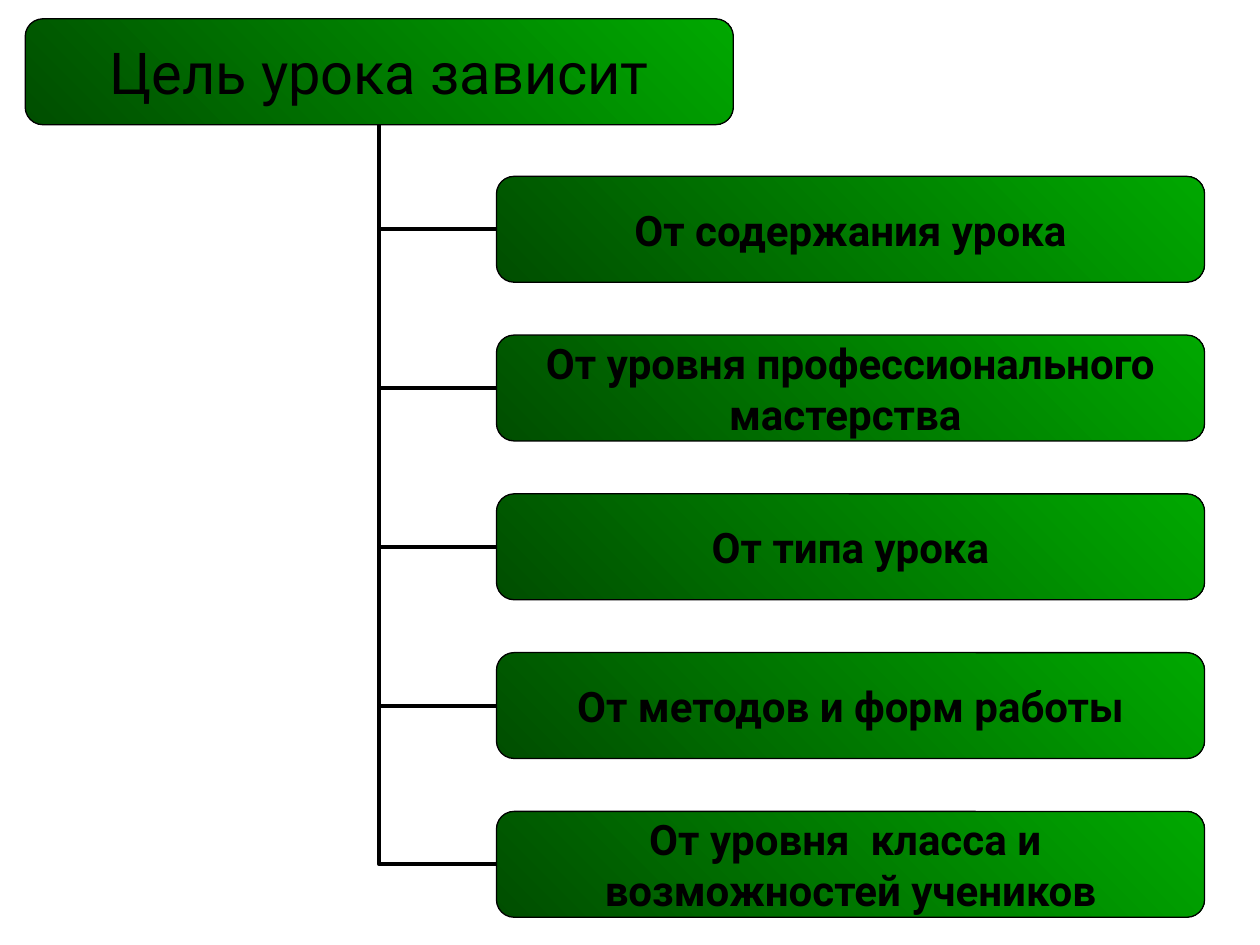
from dataclasses import dataclass

from lxml import etree
from pptx import Presentation
from pptx.dml.color import RGBColor
from pptx.enum.shapes import MSO_CONNECTOR as Connector, MSO_SHAPE as Shape
from pptx.enum.text import MSO_ANCHOR as Anchor, PP_ALIGN as Align
from pptx.oxml.ns import qn
from pptx.util import Inches, Pt


@dataclass(frozen=True)
class Theme:
    ink: RGBColor = RGBColor(0x00, 0x00, 0x00)
    dark_green: RGBColor = RGBColor(0x00, 0x4E, 0x00)
    green: RGBColor = RGBColor(0x00, 0xA8, 0x00)
    font: str = "Roboto"
    title_size: Pt = Pt(33)
    factor_size: Pt = Pt(24)
    border: Pt = Pt(0.75)
    branch: Pt = Pt(2.25)


theme = Theme()

# Layout: the goal on top, its factors indented below at an equal pitch
BOX_WIDTH, BOX_HEIGHT = 5.62, 0.84
GOAL_LEFT, GOAL_TOP = 0.2, 0.15
FACTOR_LEFT, FACTOR_TOP, FACTOR_PITCH = 3.94, 1.4, 1.26

goal = "Цель урока зависит"
factors = [
    "От содержания урока",
    "От уровня профессионального\nмастерства ",
    "От типа урока",
    "От методов и форм работы",
    "От уровня  класса и \nвозможностей учеников",
]

deck = Presentation()
deck.slide_width, deck.slide_height = Inches(10), Inches(7.5)
page = deck.slides.add_slide(deck.slide_layouts[6])


def add_box(left, top, text, size, bold):
    box = page.shapes.add_shape(Shape.ROUNDED_RECTANGLE, Inches(left), Inches(top),
                                Inches(BOX_WIDTH), Inches(BOX_HEIGHT))
    box.shadow.inherit = False
    box.fill.gradient()
    box.fill.gradient_angle = 45
    for stop, color in zip(box.fill.gradient_stops, (theme.dark_green, theme.green)):
        stop.color.rgb = color
    box.line.color.rgb = theme.ink
    box.line.width = theme.border

    frame = box.text_frame
    frame.margin_left = frame.margin_right = frame.margin_top = frame.margin_bottom = 0
    frame.word_wrap = False
    frame.vertical_anchor = Anchor.MIDDLE
    frame.text = text
    for para in frame.paragraphs:
        para.alignment = Align.CENTER
        for span in para.runs:
            span.font.name = theme.font
            span.font.size = size
            span.font.bold = bold
            span.font.color.rgb = theme.ink


# Branches from each factor's left side to the bottom of the goal
trunk_x = GOAL_LEFT + BOX_WIDTH / 2
trunk_top = GOAL_TOP + BOX_HEIGHT
factor_tops = [FACTOR_TOP + FACTOR_PITCH * row for row in range(len(factors))]
for top in reversed(factor_tops):
    branch = page.shapes.add_connector(
        Connector.ELBOW, Inches(FACTOR_LEFT), Inches(top + BOX_HEIGHT / 2),
        Inches(trunk_x), Inches(trunk_top))
    branch.line.color.rgb = theme.ink
    branch.line.width = theme.branch
    properties = branch._element.spPr
    properties.find(qn("a:prstGeom")).set("prst", "bentConnector2")
    etree.SubElement(properties, qn("a:effectLst"))

# Goal and factors
add_box(GOAL_LEFT, GOAL_TOP, goal, theme.title_size, False)
for top, factor in zip(factor_tops, factors):
    add_box(FACTOR_LEFT, top, factor, theme.factor_size, True)

deck.save("out.pptx")
